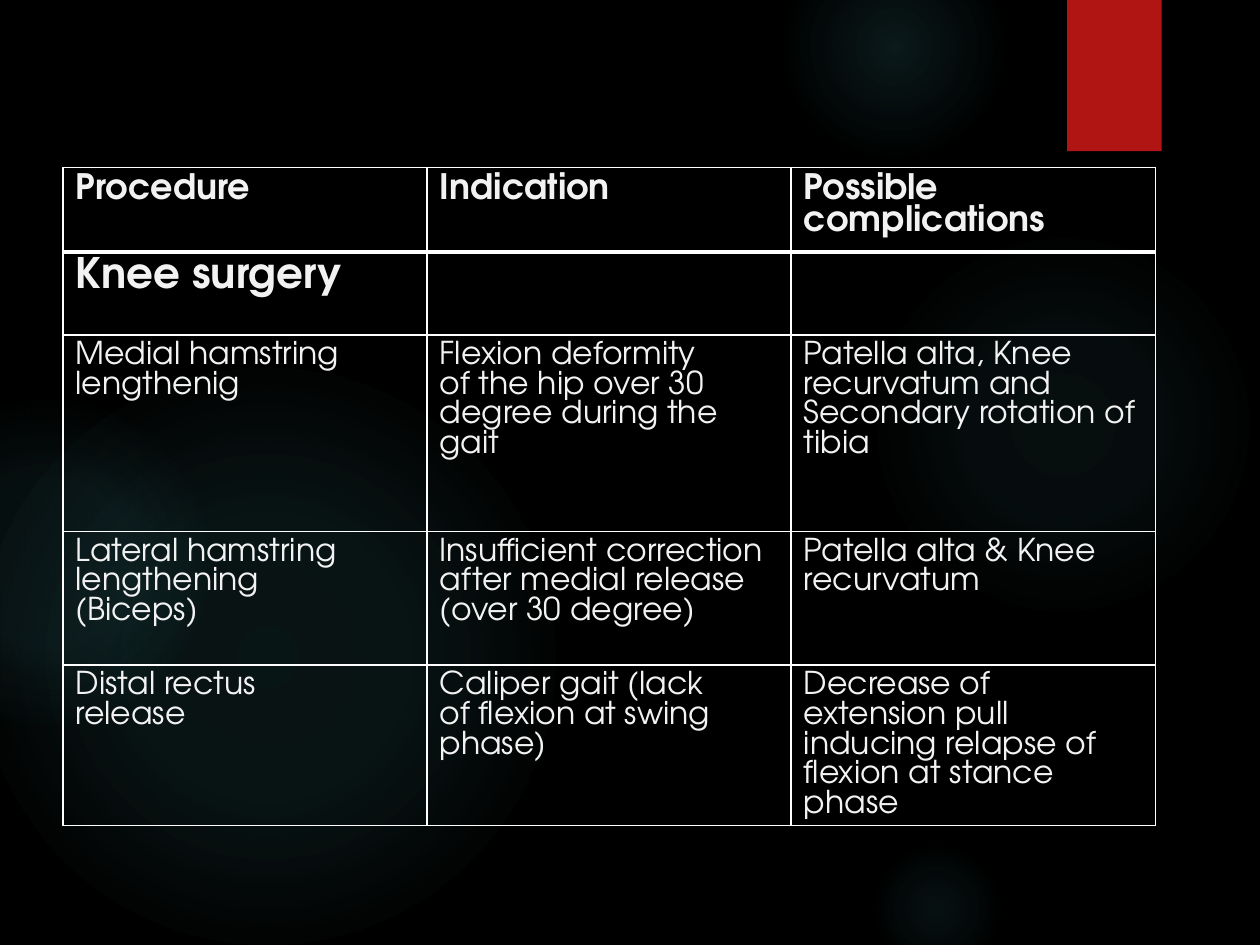
"""Build a slide with a table of knee surgery procedures."""
import pptx
import pptx.dml.color
import pptx.enum.shapes
import pptx.oxml
import pptx.oxml.ns
import pptx.util
from pptx.util import Inches

COLORS = {"background": "000000", "glow": "50B9C1", "ribbon": "B01513",
          "text": "F2F2F2", "border": "FFFFFF", "shadow": "000000"}
FONT = "TeX Gyre Adventor"
LINE_PITCH = {18: 16.9, 20: 18.3, 24: 22}

GLOWS = [
    (6.89, 1.83, 3.08, [(0, 7), (36, 6), (69, 0)]),
    (6.22, -0.5, 1.75, [(0, 14), (36, 7), (73, 0)]),
    (6.89, 6.67, 1.08, [(0, 9), (36, 5), (66, 0)]),
    (-0.17, 2.92, 4.58, [(0, 11), (36, 10), (75, 0)]),
    (-0.92, 3.17, 2.58, [(0, 8), (36, 8), (72, 0)]),
]

COLUMN_WIDTH = 2.89
ROW_HEIGHTS = [0.67, 0.66, 1.56, 1.06, 1.27]
PROCEDURES = [
    ["Procedure", "Indication", "Possible complications"],
    ["Knee surgery", "", ""],
    ["Medial hamstring lengthenig",
     "Flexion deformity\nof the hip over 30\ndegree during the\ngait",
     "Patella alta, Knee\nrecurvatum and\nSecondary rotation of\ntibia"],
    ["Lateral hamstring\nlengthening\n(Biceps)",
     "Insufficient correction after medial release\n(over 30 degree)",
     "Patella alta & Knee\nrecurvatum"],
    ["Distal rectus\nrelease",
     "Caliper gait (lack\nof flexion at swing\nphase)",
     "Decrease of\nextension pull\ninducing relapse of\nflexion at stance\nphase"],
]


def rgb(name):
    """Return the palette colour of that name."""
    return pptx.dml.color.RGBColor.from_string(COLORS[name])


def drawing_xml(tag, attributes, content):
    """Return a DrawingML element."""
    namespace = pptx.oxml.ns.nsdecls("a")
    return pptx.oxml.parse_xml(f"<a:{tag} {namespace} {attributes}>{content}</a:{tag}>")


class SlideBuilder:
    """Hold the style and the current slide."""

    def __init__(self, slide):
        """Take a slide and paint its background."""
        self.slide = slide
        slide.background.fill.solid()
        slide.background.fill.fore_color.rgb = rgb("background")

    def shape(self, kind, left, top, width, height):
        """Add an outline-free preset shape."""
        shape = self.slide.shapes.add_shape(
            kind, Inches(left), Inches(top), Inches(width), Inches(height))
        shape.shadow.inherit = False
        shape.line.fill.background()
        return shape

    def glow(self, left, top, size, stops):
        """Add a circle that fades out from its centre."""
        circle = self.shape(pptx.enum.shapes.MSO_SHAPE.OVAL, left, top, size, size)
        circle.fill.gradient()
        stop_list = "".join(
            f'<a:gs pos="{position * 1000}"><a:srgbClr val="{COLORS["glow"]}">'
            f'<a:alpha val="{alpha * 1000}"/></a:srgbClr></a:gs>'
            for position, alpha in stops)
        fade = drawing_xml(
            "gradFill", 'rotWithShape="1"',
            f'<a:gsLst>{stop_list}</a:gsLst><a:path path="circle">'
            '<a:fillToRect l="50000" t="50000" r="50000" b="50000"/></a:path>')
        properties = circle.element.spPr
        properties.replace(properties.find(pptx.oxml.ns.qn("a:gradFill")), fade)

    def ribbon(self, left, top, width, height):
        """Add the red ribbon with its soft shadow."""
        ribbon = self.shape(
            pptx.enum.shapes.MSO_SHAPE.RECTANGLE, left, top, width, height)
        ribbon.fill.solid()
        ribbon.fill.fore_color.rgb = rgb("ribbon")
        effects = ribbon.element.spPr.find(pptx.oxml.ns.qn("a:effectLst"))
        effects.append(drawing_xml(
            "outerShdw",
            'blurRad="38100" dist="25400" dir="5400000" rotWithShape="0"',
            f'<a:srgbClr val="{COLORS["shadow"]}"><a:alpha val="45000"/></a:srgbClr>'))

    def table(self, left, top, column_width, row_heights, rows):
        """Add a bordered table with a heavy rule under the header."""
        columns = len(rows[0])
        table = self.slide.shapes.add_table(
            len(rows), columns, Inches(left), Inches(top),
            Inches(column_width * columns), Inches(sum(row_heights))).table
        table.horz_banding = False
        for column in table.columns:
            column.width = Inches(column_width)
        for row_index, (height, texts) in enumerate(zip(row_heights, rows)):
            table.rows[row_index].height = Inches(height)
            size = {0: 20, 1: 24}.get(row_index, 18)
            for column_index, text in enumerate(texts):
                cell = table.cell(row_index, column_index)
                self.borders(cell, top=3 if row_index == 1 else 1,
                             bottom=3 if row_index == 0 else 1)
                cell.fill.background()
                self.cell_text(cell, text, size, bold=row_index < 2)

    def borders(self, cell, top, bottom):
        """Draw the four borders of a cell."""
        for side, width in (("L", 1), ("R", 1), ("T", top), ("B", bottom)):
            cell._tc.get_or_add_tcPr().append(drawing_xml(
                f"ln{side}", f'w="{pptx.util.Pt(width)}"',
                f'<a:solidFill><a:srgbClr val="{COLORS["border"]}"/></a:solidFill>'))

    def cell_text(self, cell, text, size, bold):
        """Write and format the text of a cell."""
        cell.text_frame.text = text
        for paragraph in cell.text_frame.paragraphs:
            paragraph.line_spacing = pptx.util.Pt(LINE_PITCH[size])
            for run in paragraph.runs:
                run.font.name = FONT
                run.font.size = pptx.util.Pt(size)
                run.font.bold = bold
                run.font.color.rgb = rgb("text")


def main():
    """Build and save the presentation."""
    presentation = pptx.Presentation()
    presentation.slide_width = Inches(10)
    presentation.slide_height = Inches(7.5)
    builder = SlideBuilder(
        presentation.slides.add_slide(presentation.slide_layouts[6]))
    for glow in GLOWS:
        builder.glow(*glow)
    builder.ribbon(8.47, 0, 0.75, 1.2)
    builder.table(0.5, 1.33, COLUMN_WIDTH, ROW_HEIGHTS, PROCEDURES)
    presentation.save("out.pptx")


if __name__ == "__main__":
    main()
